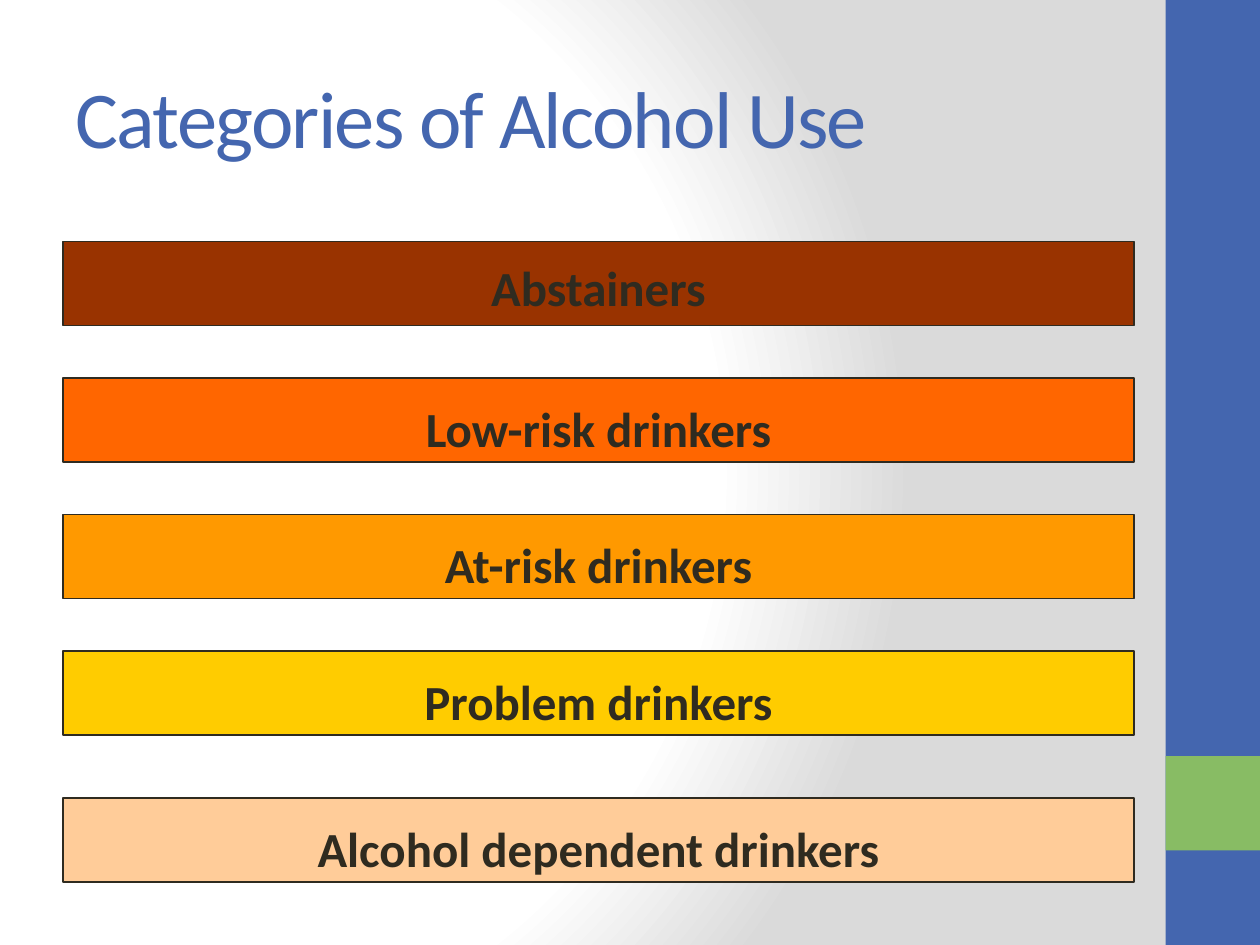
from dataclasses import dataclass

from pptx import Presentation
from pptx import util as u
from pptx.dml.color import RGBColor
from pptx.enum import text
from pptx.oxml import parse_xml
from pptx.oxml.ns import nsdecls, qn
from pptx.enum import shapes

UNIT = 1 / 12  # the grid has 120 columns and 90 rows, each 1/12 inch


@dataclass(frozen=True)
class Theme:
    font: str = "Calibri"
    title_size: int = 46
    label_size: int = 28
    blue: str = "4466AF"
    green: str = "88BC64"
    ink: str = "2F2B20"
    glow: str = "FFFFFF"
    edge: str = "DADADA"


class SlideBuilder:
    def __init__(self, slide, theme):
        self.slide = slide
        self.theme = theme

    def background(self):
        """Fill with a circular glow centred on the left side."""
        self.slide.background.fill.gradient()
        default = self.slide.element.find(".//" + qn("a:gradFill"))
        stops = ((0, self.theme.glow), (75, self.theme.glow), (100, self.theme.edge))
        stop_xml = "".join(
            f'<a:gs pos="{share * 1000}"><a:srgbClr val="{color}"/></a:gs>'
            for share, color in stops
        )
        glow = parse_xml(
            f'<a:gradFill {nsdecls("a")} rotWithShape="1"><a:gsLst>{stop_xml}</a:gsLst>'
            '<a:path path="circle">'
            '<a:fillToRect l="20000" t="50000" r="100000" b="50000"/>'
            "</a:path></a:gradFill>"
        )
        default.getparent().replace(default, glow)

    def place(self, item, col, row, cols, rows):
        item.left, item.top, item.width, item.height = (
            u.Inches(n * UNIT) for n in (col, row, cols, rows)
        )

    def style(self, run, size, color, bold=False):
        run.font.name = self.theme.font
        run.font.size = u.Pt(size)
        run.font.bold = bold
        run.font.color.rgb = RGBColor.from_string(color)

    def title(self, wording, *cell):
        heading = self.slide.shapes.title
        self.place(heading, *cell)
        frame = heading.text_frame
        frame.text = wording
        frame.auto_size = text.MSO_AUTO_SIZE.NONE
        frame.vertical_anchor = text.MSO_ANCHOR.MIDDLE
        paragraph = frame.paragraphs[0]
        paragraph.alignment = text.PP_ALIGN.LEFT
        run = paragraph.runs[0]
        self.style(run, self.theme.title_size, self.theme.blue)
        run.font._element.set("spc", "-100")

    def block(self, color, *cell):
        block = self.slide.shapes.add_shape(shapes.MSO_SHAPE.RECTANGLE, 0, 0, 0, 0)
        self.place(block, *cell)
        block.shadow.inherit = False
        block.fill.solid()
        block.fill.fore_color.rgb = RGBColor.from_string(color)
        block.line.fill.background()
        return block

    def category(self, label, color, drop, *cell):
        """Add an outlined bar whose centred label sits lower by half of drop."""
        bar = self.block(color, *cell)
        bar.line.color.rgb = RGBColor.from_string(self.theme.ink)
        bar.line.width = u.Pt(0.75)
        frame = bar.text_frame
        frame.text = label
        frame.word_wrap = False
        frame.vertical_anchor = text.MSO_ANCHOR.MIDDLE
        frame.margin_top, frame.margin_bottom = u.Inches(drop), 0
        paragraph = frame.paragraphs[0]
        paragraph.alignment = text.PP_ALIGN.CENTER
        self.style(paragraph.runs[0], self.theme.label_size, self.theme.ink, bold=True)


def main():
    deck = Presentation()
    deck.slide_width, deck.slide_height = u.Inches(10), u.Inches(7.5)
    theme = Theme()
    builder = SlideBuilder(deck.slides.add_slide(deck.slide_layouts[5]), theme)

    builder.background()
    builder.block(theme.blue, 111, 0, 9, 90)
    builder.block(theme.green, 111, 72, 9, 9)
    builder.title("Categories of Alcohol Use", 6, 3.6, 100, 15)

    categories = (
        ("Abstainers", "993300", 23, 0.05),
        ("Low-risk drinkers", "FF6600", 36, 0.12),
        ("At-risk drinkers", "FF9900", 49, 0.12),
        ("Problem drinkers", "FFCC00", 62, 0.12),
        ("Alcohol dependent drinkers", "FFCC99", 76, 0.12),
    )
    for label, color, row, drop in categories:
        builder.category(label, color, drop, 6, row, 102, 8)

    deck.save("out.pptx")


if __name__ == "__main__":
    main()
